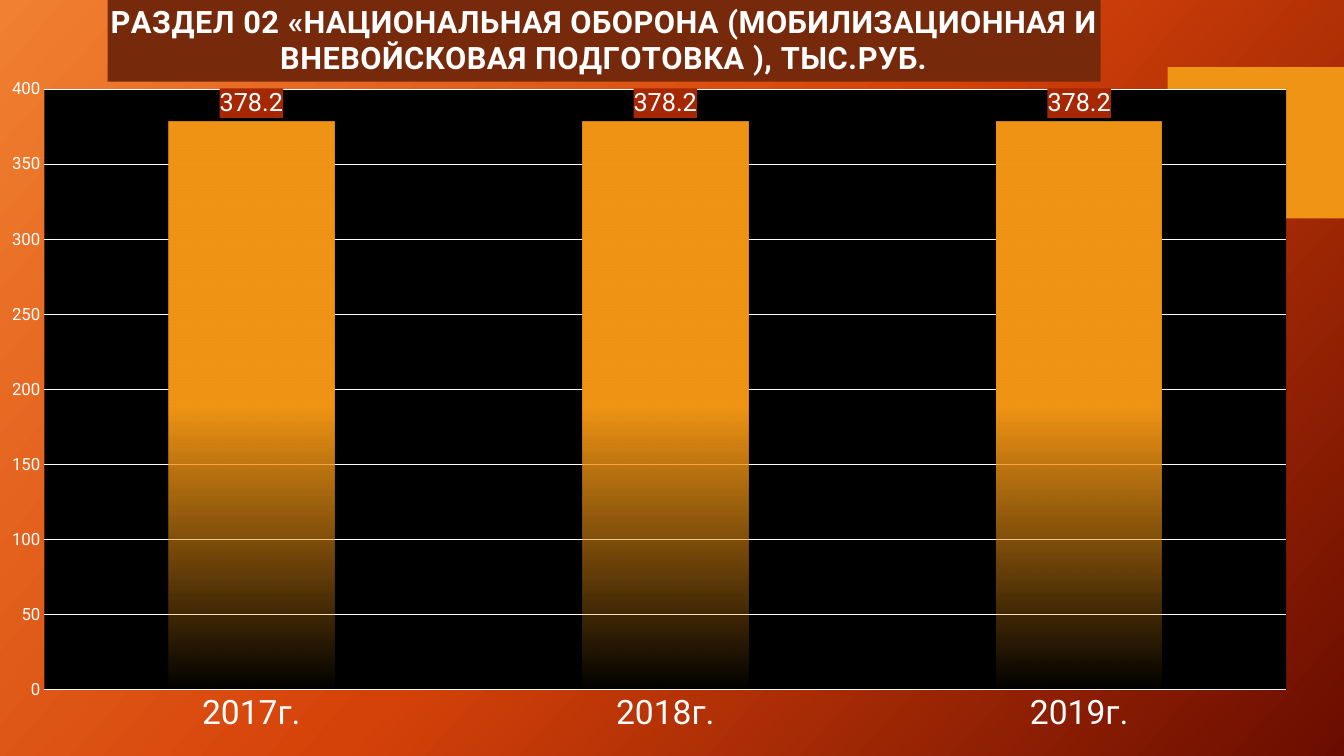
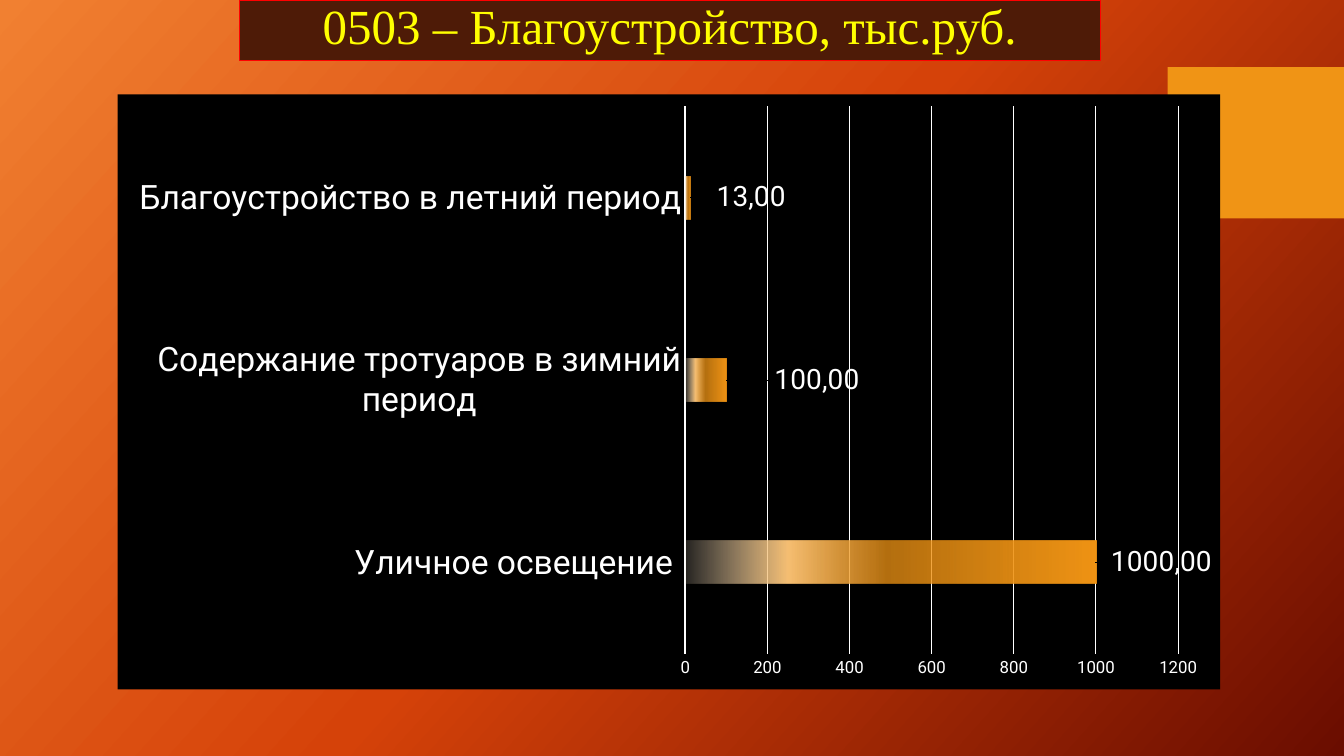
"""Build two budget chart slides on a shared warm gradient background."""
from lxml.etree import SubElement
from pptx import Presentation
from pptx.chart.data import CategoryChartData
from pptx.dml.color import RGBColor
from pptx.enum.chart import XL_CHART_TYPE, XL_LABEL_POSITION, XL_TICK_MARK
from pptx.enum.shapes import MSO_SHAPE
from pptx.enum.text import MSO_ANCHOR, PP_ALIGN
from pptx.oxml import parse_xml
from pptx.oxml.ns import nsdecls, qn
from pptx.util import Pt

COLORS = {
    "white": "FFFFFF", "black": "000000", "orange": "F09415",
    "pale": "F6BF73", "cream": "FCEAD0", "title": "762A0B",
    "label": "A62803", "banner": "4E1B07", "red": "FF0000",
    "yellow": "FFFF00", "glow": "F18031", "flame": "D54209", "wine": "6A0D00",
}
RGB = {name: RGBColor.from_string(value) for name, value in COLORS.items()}
SOLID = ("<c:spPr %s><a:solidFill><a:srgbClr val=\"{}\"/></a:solidFill></c:spPr>"
         % nsdecls("c", "a"))


def set_gradient(element, stops, angle):
    gradient = element.find(".//" + qn("a:gradFill"))
    stop_list = gradient.find(qn("a:gsLst"))
    for stop in list(stop_list):
        stop_list.remove(stop)
    for position, color, opacity in stops:
        stop = SubElement(stop_list, qn("a:gs"), pos=str(position * 1000))
        shade = SubElement(stop, qn("a:srgbClr"), val=COLORS[color])
        if opacity < 100:
            SubElement(shade, qn("a:alpha"), val=str(opacity * 1000))
    gradient.find(qn("a:lin")).set("ang", str(angle * 60000))


def set_layout(parent, index, **values):
    for old in parent.findall(qn("c:layout")):
        parent.remove(old)
    layout = parse_xml("<c:layout %s/>" % nsdecls("c"))
    parent.insert(index, layout)
    manual = SubElement(layout, qn("c:manualLayout"))
    for name, value in values.items():
        SubElement(manual, qn("c:" + name), val=str(value))


deck = Presentation()
deck.slide_width, deck.slide_height = Pt(960), Pt(540)
blank = deck.slide_layouts[6]
deck.slide_master.background.fill.gradient()
set_gradient(deck.slide_master.element,
             [(0, "glow", 100), (50, "flame", 100), (100, "wine", 100)], 42)

pages = [deck.slides.add_slide(blank) for _ in range(2)]
square = pages[0].shapes.add_shape(
    MSO_SHAPE.RECTANGLE, Pt(834), Pt(48), Pt(126), Pt(108))
square.shadow.inherit = False
square.fill.solid()
square.fill.fore_color.rgb = RGB["orange"]
square.line.fill.background()
blank.shapes._spTree.append(square._element)

banner = pages[1].shapes.add_shape(
    MSO_SHAPE.RECTANGLE, Pt(171), Pt(0), Pt(615), Pt(43))
banner.shadow.inherit = False
banner.fill.solid()
banner.fill.fore_color.rgb = RGB["banner"]
banner.line.color.rgb = RGB["red"]
banner.line.width = Pt(0.75)
banner.text_frame.vertical_anchor = MSO_ANCHOR.MIDDLE
para = banner.text_frame.paragraphs[0]
para.alignment, para.line_spacing = PP_ALIGN.CENTER, 0.8
span = para.add_run()
span.text = "0503 – Благоустройство, тыс.руб."
for name, value in {"name": "Times New Roman", "size": Pt(35)}.items():
    setattr(span.font, name, value)
span.font.color.rgb = RGB["yellow"]

charts = [
    {"kind": XL_CHART_TYPE.COLUMN_CLUSTERED,
     "frame": (0, 0, 960, 540),
     "values": {"2017г.": 378.2, "2018г.": 378.2, "2019г.": 378.2},
     "plot": {"x": 0.033, "y": 0.118, "w": 0.924, "h": 0.794},
     "gap": 150, "overlap": 0, "top": 400, "step": 50, "label_size": 18,
     "stops": [(50, "orange", 100), (100, "orange", 0)], "angle": 90},
    {"kind": XL_CHART_TYPE.BAR_CLUSTERED,
     "frame": (84, 67.5, 787.5, 425),
     "values": {"Уличное освещение ": 1000,
                "Содержание тротуаров в зимний период": 100,
                "Благоустройство в летний период": 13},
     "plot": {"x": 0.515, "y": 0.02, "w": 0.447, "h": 0.92},
     "gap": 326, "overlap": -58, "top": 1200, "step": 200, "label_size": 20,
     "stops": [(0, "orange", 100), (51, "orange", 75),
               (75, "pale", 100), (100, "cream", 15)], "angle": 180},
]
built = []
for page, item in zip(pages, charts):
    data = CategoryChartData()
    data.categories = list(item["values"])
    data.add_series("Series 1", list(item["values"].values()))
    chart = page.shapes.add_chart(
        item["kind"], *[Pt(length) for length in item["frame"]], data).chart
    built.append(chart)
    chart.has_legend = False
    chart.has_title = False
    plot = chart.plots[0]
    for name, value in {"gap_width": item["gap"], "overlap": item["overlap"],
                        "vary_by_categories": False}.items():
        setattr(plot, name, value)
    series = plot.series[0]
    series.format.fill.gradient()
    set_gradient(series._element, item["stops"], item["angle"])
    labels = series.data_labels
    labels.show_value = True
    labels.position = XL_LABEL_POSITION.OUTSIDE_END
    category_axis, value_axis = chart.category_axis, chart.value_axis
    for name, value in {"minimum_scale": 0, "maximum_scale": item["top"],
                        "major_unit": item["step"]}.items():
        setattr(value_axis, name, value)
    for axis in (category_axis, value_axis):
        axis.major_tick_mark = XL_TICK_MARK.NONE
        axis.format.line.fill.background()
    value_axis.has_major_gridlines = True
    grid = value_axis.major_gridlines.format.line
    grid.color.rgb = RGB["white"]
    grid.width = Pt(0.75)
    for font, size in ((chart.font, 10), (category_axis.tick_labels.font, 24),
                       (value_axis.tick_labels.font, 12),
                       (labels.font, item["label_size"])):
        for name, value in {"name": "Roboto", "size": Pt(size),
                            "bold": False}.items():
            setattr(font, name, value)
        font.color.rgb = RGB["white"]
    plot_area = chart.element.find(".//" + qn("c:plotArea"))
    set_layout(plot_area, 0, layoutTarget="inner", xMode="edge", yMode="edge",
               **item["plot"])

defense, amenities = built
defense.element.find(".//" + qn("c:plotArea")).append(
    parse_xml(SOLID.format(COLORS["black"])))
defense.element.find(".//" + qn("c:dLbls")).find(qn("c:txPr")).addprevious(
    parse_xml(SOLID.format(COLORS["label"])))
title = defense.chart_title
for index, line in enumerate(["РАЗДЕЛ 02 «НАЦИОНАЛЬНАЯ ОБОРОНА (МОБИЛИЗАЦИОННАЯ И",
                              "ВНЕВОЙСКОВАЯ ПОДГОТОВКА ), ТЫС.РУБ."]):
    frame = title.text_frame
    para = frame.add_paragraph() if index else frame.paragraphs[0]
    span = para.add_run()
    span.text = line
    for name, value in {"name": "Roboto", "size": Pt(22), "bold": True}.items():
        setattr(span.font, name, value)
    span.font.color.rgb = RGB["white"]
    span._r.get_or_add_rPr().set("spc", "50")
title.format.fill.solid()
title.format.fill.fore_color.rgb = RGB["title"]
set_layout(title.element, 1, xMode="edge", yMode="edge", x=0.08, y=0)

amenities.element.find(qn("c:chart")).addnext(
    parse_xml(SOLID.format(COLORS["black"])))
axis_line = amenities.category_axis.format.line
axis_line.color.rgb = RGB["white"]
axis_line.width = Pt(1.5)
points = amenities.plots[0].series[0].points
for index, text in enumerate(["1000,00", "100,00", "13,00"]):
    label = points[index].data_label
    span = label.text_frame.paragraphs[0].add_run()
    span.text = text
    for name, value in {"name": "Roboto", "size": Pt(20)}.items():
        setattr(span.font, name, value)
    span.font.color.rgb = RGB["white"]
    label.position = XL_LABEL_POSITION.OUTSIDE_END
for element, shift in zip(amenities.element.iter(qn("c:dLbl")), (0.01, 0.04, 0.02)):
    set_layout(element, 1, x=shift, y=0)

deck.save("out.pptx")
